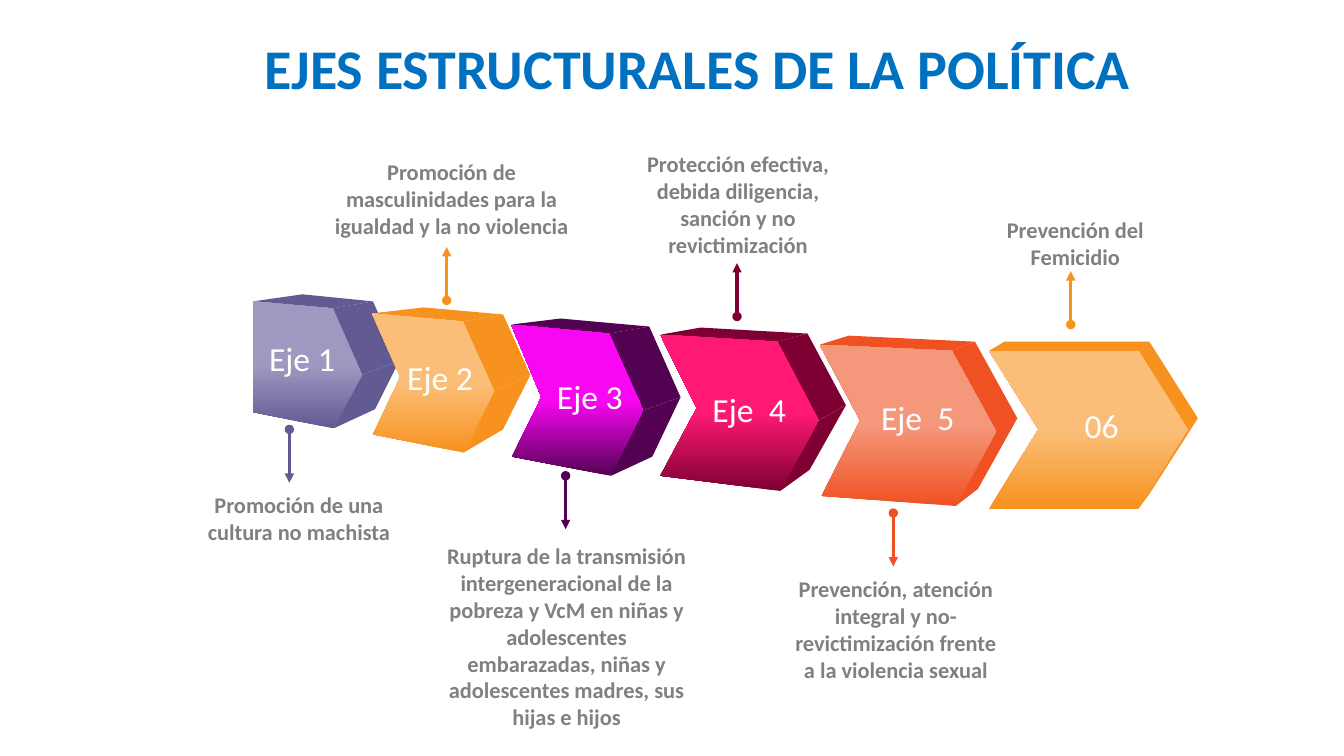
from pptx import Presentation
from pptx.dml.color import RGBColor
from pptx.enum.shapes import MSO_CONNECTOR
from pptx.enum.text import MSO_ANCHOR, MSO_AUTO_SIZE, PP_ALIGN
from pptx.oxml.ns import qn
from pptx.util import Inches, Pt
from lxml.etree import SubElement

TITLE = "EJES ESTRUCTURALES DE LA POLÍTICA"
LEFT, CENTER = PP_ALIGN.LEFT, PP_ALIGN.CENTER
UP, DOWN = -1, 1

THEME = {
    "font": "Calibri", "title": "0070C0", "caption": "808080", "label": "FFFFFF",
    "title_size": 40, "label_size": 24, "caption_size": 16, "arrow_width": 2.25,
    # dark side, light front
    "violet": ("625A93", "9F99C1"), "orange": ("F7921E", "FABE78"),
    "purple": ("530251", "F906F3"), "crimson": ("7E0032", "FF1974"),
    "coral": ("EF5122", "F5977A"),
}
ARROW_LENGTH = 0.53

# front: top left, top right, tip, bottom right, bottom left and, if any, notch
# back: top left, top right, tip, bottom right
# label and caption boxes: left, top, width(, height); arrow: x, start y, direction
AXES = [
    {"label": "Eje 1", "label_box": (2.57, 3.3, 0.9), "align": LEFT, "color": "violet",
     "front": [(2.51, 2.99), (3.3, 3.06), (3.59, 3.72), (3.31, 4.25), (2.51, 4.09)],
     "back": [(3, 2.92), (3.7, 2.99), (3.96, 3.58), (3.72, 4.06)],
     "arrow": (2.87, 4.26, DOWN),
     "caption": "Promoción de una cultura no machista",
     "caption_box": (1.82, 4.82, 2.29, 0.64)},
    {"label": "Eje 2", "label_box": (3.94, 3.49, 0.97), "align": LEFT, "color": "orange",
     "front": [(3.69, 3.11), (4.59, 3.19), (4.9, 3.88), (4.6, 4.49), (3.7, 4.31), (3.97, 3.74)],
     "back": [(4.2, 3.05), (4.99, 3.12), (5.26, 3.72), (4.99, 4.26)],
     "arrow": (4.43, 2.98, UP),
     "caption": "Promoción de masculinidades para la igualdad y la no violencia",
     "caption_box": (3.2, 1.52, 2.56, 0.91)},
    {"label": "Eje 3", "label_box": (5.33, 3.68, 1.04), "align": CENTER, "color": "purple",
     "front": [(5.07, 3.22), (6.04, 3.31), (6.38, 4.07), (6.06, 4.72), (5.08, 4.53), (5.37, 3.94)],
     "back": [(5.56, 3.16), (6.44, 3.24), (6.75, 3.94), (6.47, 4.53)],
     "arrow": (5.61, 4.72, DOWN),
     "caption": "Ruptura de la transmisión intergeneracional de la pobreza y VcM en niñas y "
                "adolescentes embarazadas, niñas y adolescentes madres, sus hijas e hijos",
     "caption_box": (4.28, 5.33, 2.68, 1.99)},
    {"label": "Eje  4", "label_box": (6.93, 3.81, 1), "align": CENTER, "color": "crimson",
     "front": [(6.55, 3.32), (7.71, 3.39), (8.12, 4.17), (7.74, 4.87), (6.55, 4.72), (6.91, 4.05)],
     "back": [(6.95, 3.25), (8.01, 3.31), (8.39, 4.02), (8.03, 4.66)],
     "arrow": (7.31, 3.14, UP),
     "caption": "Protección efectiva, debida diligencia, sanción y no revictimización",
     "caption_box": (6.06, 1.44, 2.52, 1.18)},
    {"label": "Eje  5", "label_box": (8.64, 3.89, 1.06), "align": LEFT, "color": "coral",
     "front": [(8.13, 3.42), (9.44, 3.48), (9.88, 4.28), (9.48, 5.02), (8.15, 4.92), (8.53, 4.17)],
     "back": [(8.42, 3.33), (9.67, 3.39), (10.09, 4.15), (9.7, 4.85)],
     "arrow": (8.86, 5.09, DOWN),
     "caption": "Prevención, atención integral y no-revictimización frente a la violencia sexual",
     "caption_box": (7.74, 5.66, 2.29, 1.18)},
    {"label": "06", "label_box": (10.66, 3.97, 0.6), "align": LEFT, "color": "orange",
     "front": [(9.81, 3.48), (11.29, 3.48), (11.78, 4.26), (11.29, 5.05), (9.81, 5.05), (10.3, 4.26)],
     "back": [(9.96, 3.39), (11.4, 3.39), (11.88, 4.15), (11.4, 4.9)],
     "arrow": (10.62, 3.22, UP),
     "caption": "Prevención del Femicidio",
     "caption_box": (9.52, 2.1, 2.29, 0.64)},
]


def rgb(color):
    return RGBColor.from_string(color)


def write(tf, text, role, align, bold):
    """Put one run in the frame, styled by its role in the theme."""
    tf.word_wrap = True
    tf.auto_size = MSO_AUTO_SIZE.NONE
    p = tf.paragraphs[0]
    p.alignment = align
    r = p.add_run()
    r.text = text
    r.font.name = THEME["font"]
    r.font.size = Pt(THEME[role + "_size"])
    r.font.bold = bold
    r.font.color.rgb = rgb(THEME[role])


def add_text(shapes, box, text, role, align, bold):
    sp = shapes.add_textbox(*map(Inches, box))
    write(sp.text_frame, text, role, align, bold)


def add_face(shapes, points):
    """Add a closed, unlined polygon and return it for filling."""
    start, *rest = [(Inches(x), Inches(y)) for x, y in points]
    builder = shapes.build_freeform(*start)
    builder.add_line_segments(rest, close=True)
    sp = builder.convert_to_shape()
    sp.shadow.inherit = False
    sp.line.fill.background()
    return sp


def add_block(slide, axis):
    """Draw three dark sides between front and back, then the front and its label."""
    shapes = slide.shapes.add_group_shape().shapes
    dark, light = THEME[axis["color"]]
    front, back = axis["front"], axis["back"]
    for i in range(3):
        side = add_face(shapes, [front[i], back[i], back[i + 1], front[i + 1]]
                        if i == 0 else [front[i], back[i], back[i + 1], front[i + 1]])
        side.fill.solid()
        side.fill.fore_color.rgb = rgb(dark)
    fill = add_face(shapes, front).fill
    fill.gradient()
    fill.gradient_angle = 90
    for stop, position, color in zip(fill.gradient_stops, (0, 0.5), (dark, light)):
        stop.position = position
        stop.color.rgb = rgb(color)
    add_text(shapes, (*axis["label_box"], 0.5), axis["label"], "label", axis["align"], False)


def add_arrow(slide, x, y, direction, color):
    end = y + direction * ARROW_LENGTH
    line = slide.shapes.add_connector(
        MSO_CONNECTOR.STRAIGHT, Inches(x), Inches(y), Inches(x), Inches(end))
    line.line.color.rgb = rgb(color)
    line.line.width = Pt(THEME["arrow_width"])
    ln = line.line._get_or_add_ln()
    SubElement(ln, qn("a:headEnd"), type="oval")
    SubElement(ln, qn("a:tailEnd"), type="triangle")
    SubElement(line._element.spPr, qn("a:effectLst"))


def main():
    prs = Presentation()
    prs.slide_width, prs.slide_height = Inches(13.33), Inches(7.5)
    slide = prs.slides.add_slide(prs.slide_layouts[5])

    title = slide.shapes.title
    title.left, title.top = Inches(0), Inches(0.28)
    title.width, title.height = Inches(13.33), Inches(0.77)
    tf = title.text_frame
    tf.margin_left = Inches(0.6)
    tf.vertical_anchor = MSO_ANCHOR.MIDDLE
    write(tf, TITLE, "title", CENTER, True)

    for axis in AXES:
        add_block(slide, axis)
    for axis in AXES:
        add_arrow(slide, *axis["arrow"], THEME[axis["color"]][0])
        add_text(slide.shapes, axis["caption_box"], axis["caption"], "caption", CENTER, True)
    prs.save("out.pptx")


if __name__ == "__main__":
    main()
